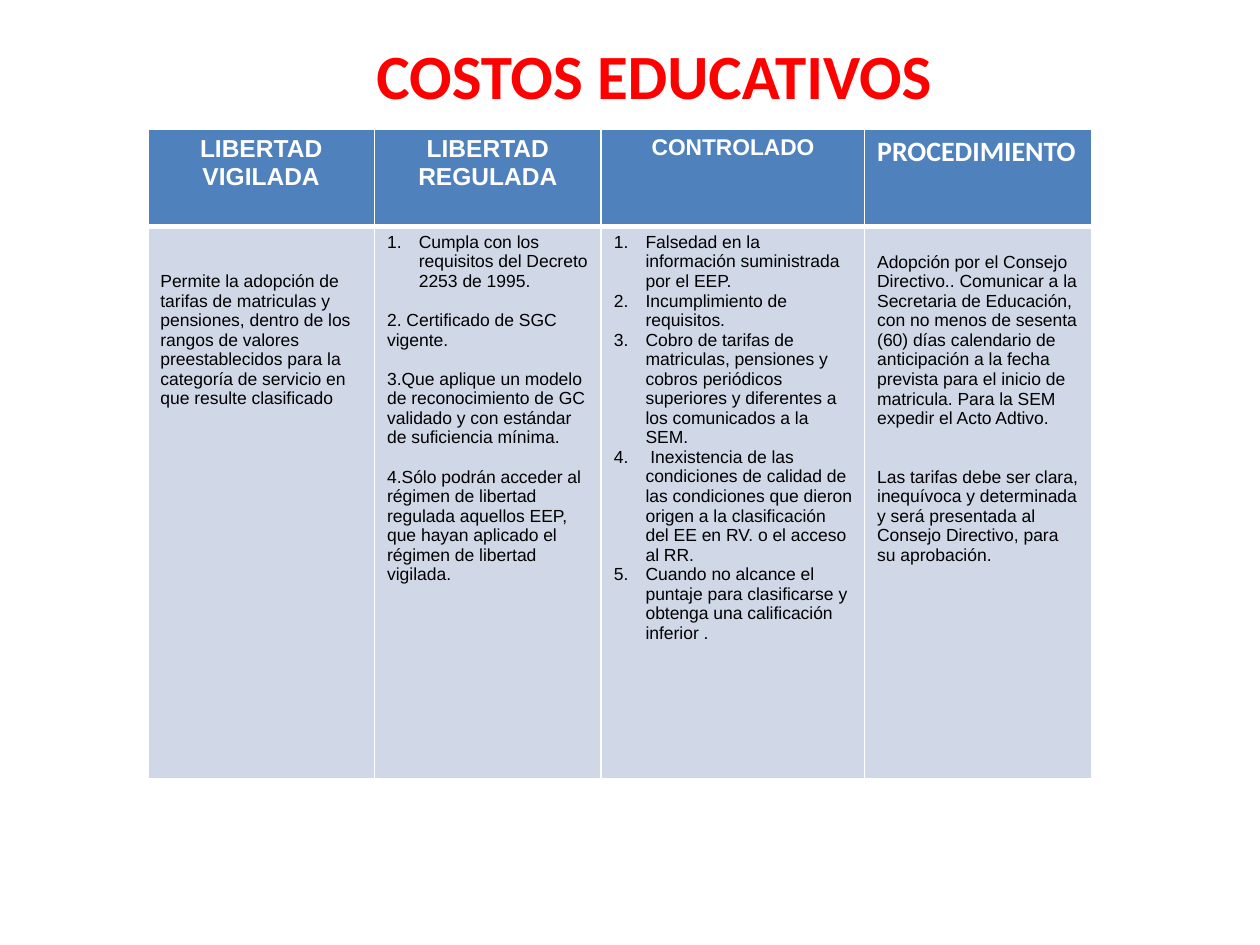
from lxml.etree import SubElement
from pptx import Presentation
from pptx.dml.color import RGBColor
from pptx.enum.text import MSO_ANCHOR, PP_ALIGN
from pptx.oxml.ns import qn
from pptx.util import Cm, Pt

WIDTHS = [4.57, 4.57, 5.31, 4.57]
HEIGHTS = [1.96, 11.13]
INSET = 0.13
LINE = 11.2
BODY = {"name": "Arial", "size": Pt(10), "bold": False}
HEAD = {"name": "Arial", "size": Pt(14), "bold": True}
TITLE = {"name": "Calibri", "size": Pt(36), "bold": True}
HEADERS = [
    ("LIBERTAD VIGILADA", PP_ALIGN.CENTER, {}),
    ("LIBERTAD REGULADA", PP_ALIGN.CENTER, {}),
    ("CONTROLADO", PP_ALIGN.CENTER, {"size": Pt(13)}),
    ("PROCEDIMIENTO", PP_ALIGN.LEFT, {"name": "Calibri", "size": Pt(16)}),
]
COLUMNS = [
    {"top": 0.92, "gap": 0, "listed": 0, "texts": [
        "Permite la adopción de tarifas de matriculas y pensiones, dentro de los "
        "rangos de valores preestablecidos para la categoría de servicio en que "
        "resulte clasificado"]},
    {"top": INSET, "gap": 1, "listed": 1, "texts": [
        "Cumpla con los requisitos del Decreto 2253 de 1995.",
        "2. Certificado de SGC vigente.",
        "3.Que aplique un modelo de reconocimiento de GC validado y con estándar "
        "de suficiencia mínima.",
        "4.Sólo podrán acceder al régimen de libertad regulada aquellos EEP, que "
        "hayan aplicado el régimen de libertad vigilada."]},
    {"top": INSET, "gap": 0, "listed": 5, "texts": [
        "Falsedad en la información suministrada por el EEP.",
        "Incumplimiento de requisitos.",
        "Cobro de tarifas de matriculas, pensiones y cobros periódicos superiores "
        "y diferentes a los comunicados a la SEM.",
        " Inexistencia de las condiciones de calidad de las condiciones que dieron "
        "origen a la clasificación del EE en RV. o el acceso al RR.",
        "Cuando no alcance el puntaje para clasificarse y obtenga una calificación "
        "inferior ."]},
    {"top": 0.53, "gap": 2, "listed": 0, "texts": [
        "Adopción por el Consejo Directivo.. Comunicar a la Secretaria de Educación, "
        "con no menos de sesenta (60) días calendario de anticipación a la fecha "
        "prevista para el inicio de matricula. Para la SEM expedir el Acto Adtivo.",
        "Las tarifas debe ser clara, inequívoca y determinada y será presentada al "
        "Consejo Directivo, para su aprobación."]},
]


def tint(color, code):
    """Give a colour format the hex colour."""
    color.rgb = RGBColor.from_string(code)


def style(para, looks, code):
    """Apply a dict of font values and a hex colour to a paragraph's runs."""
    for run in para.runs:
        for key, value in looks.items():
            setattr(run.font, key, value)
        tint(run.font.color, code)


def number(para):
    """Make a paragraph an automatically numbered item."""
    props = para._p.get_or_add_pPr()
    props.set("marL", str(Cm(0.64)))
    props.set("indent", str(-Cm(0.64)))
    SubElement(props, qn("a:buFont"), typeface="+mj-lt")
    SubElement(props, qn("a:buAutoNum"), type="arabicPeriod")


def dress(cell, code, base):
    """Give a cell white borders, with its own base width, and a fill."""
    props = cell._tc.get_or_add_tcPr()
    for side, width in {"L": 1, "R": 1, "T": 1, "B": base}.items():
        line = SubElement(props, qn(f"a:ln{side}"), w=str(Pt(width)))
        fill = SubElement(line, qn("a:solidFill"))
        SubElement(fill, qn("a:srgbClr"), val="FFFFFF")
    cell.fill.solid()
    tint(cell.fill.fore_color, code)


def head(cell, text, align, looks):
    """Fill one header cell."""
    dress(cell, "4F81BD", 3)
    para = cell.text_frame.paragraphs[0]
    para.text = text
    para.alignment = align
    style(para, HEAD | looks, "FFFFFF")


def body(cell, top, gap, listed, texts):
    """Fill one body cell with paragraphs spaced by whole lines."""
    dress(cell, "D0D8E8", 1)
    cell.margin_top = Cm(top)
    frame = cell.text_frame
    for i, text in enumerate(texts):
        para = frame.add_paragraph() if i else frame.paragraphs[0]
        para.text = text
        if i and gap:
            para.space_before = Pt(gap * LINE)
        if i < listed:
            number(para)
        style(para, BODY, "000000")


def title(slide, left, top, width, height):
    """Place and format the slide title in its box."""
    shape = slide.shapes.title
    shape.left, shape.top = Cm(left), Cm(top)
    shape.width, shape.height = Cm(width), Cm(height)
    frame = shape.text_frame
    frame.text = "COSTOS EDUCATIVOS"
    frame.vertical_anchor = MSO_ANCHOR.MIDDLE
    para = frame.paragraphs[0]
    para.alignment = PP_ALIGN.CENTER
    style(para, TITLE, "FF0000")


def regimes(slide, left, top):
    """Place the table of tariff regimes."""
    table = slide.shapes.add_table(
        len(HEIGHTS), len(WIDTHS), Cm(left), Cm(top),
        Cm(sum(WIDTHS)), Cm(sum(HEIGHTS))).table
    for row, height in zip(table.rows, HEIGHTS):
        row.height = Cm(height)
    for i, width in enumerate(WIDTHS):
        table.columns[i].width = Cm(width)
        head(table.cell(0, i), *HEADERS[i])
        body(table.cell(1, i), **COLUMNS[i])


def main():
    """Build and save the slide."""
    deck = Presentation()
    deck.slide_width, deck.slide_height = Cm(25.4), Cm(19.05)
    slide = deck.slides.add_slide(deck.slide_layouts[5])
    title(slide, 5.36, 0.41, 15.65, 2.18)
    regimes(slide, 2.98, 2.6)
    deck.save("out.pptx")


if __name__ == "__main__":
    main()
